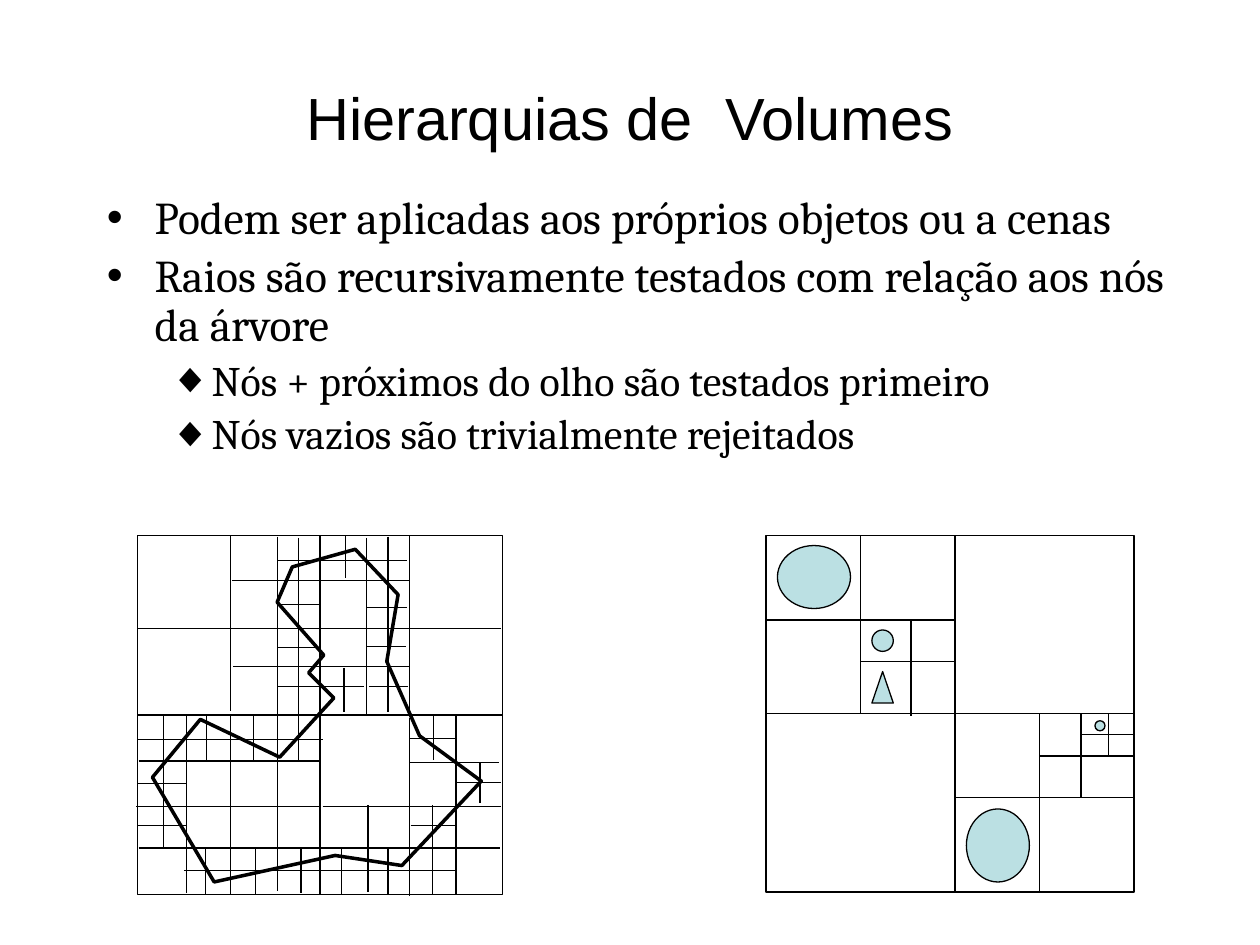
from dataclasses import dataclass

from lxml.etree import SubElement
from pptx import Presentation
from pptx.dml.color import RGBColor
from pptx.enum.shapes import MSO_CONNECTOR, MSO_SHAPE
from pptx.enum.text import MSO_ANCHOR, PP_ALIGN
from pptx.oxml.ns import qn
from pptx.util import Pt

PX = 9144


@dataclass(frozen=True)
class Theme:
    ink: RGBColor = RGBColor(0x00, 0x00, 0x00)
    object_fill: RGBColor = RGBColor(0xBB, 0xE0, 0xE3)
    title_font: str = "Arial"
    body_font: str = "Cambria"
    bullet_font: str = "Arial"
    title_size: int = 34
    point_size: int = 26
    detail_size: int = 24
    thin: float = 0.75
    thick: float = 2


THEME = Theme()

BULLETS = [
    ("Podem ser aplicadas aos próprios objetos ou a cenas", 0),
    ("Raios são recursivamente testados com relação aos nós da árvore", 0),
    ("Nós + próximos do olho são testados primeiro", 1),
    ("Nós vazios são trivialmente rejeitados", 1),
]
LEVELS = [
    {"size": THEME.point_size, "bullet": "•", "indent": 38, "hanging": 38},
    {"size": THEME.detail_size, "bullet": "◆", "indent": 81, "hanging": 31},
]

OUTLINE = [
    (121, 617), (159, 571), (222, 601), (265, 554), (245, 534), (257, 520),
    (220, 478), (232, 450), (282, 436), (316, 472), (307, 525), (333, 584),
    (382, 620), (319, 687), (266, 679), (170, 700),
]

OUTLINE_VERTICALS = [
    (183, 425, 564), (183, 568, 710), (325, 425, 566), (325, 570, 711),
    (291, 427, 567), (220, 426, 707), (308, 460, 498), (308, 426, 464),
    (274, 425, 459), (237, 427, 461), (237, 461, 603), (308, 488, 565),
    (273, 530, 565), (362, 568, 710), (148, 568, 709), (292, 639, 708),
    (130, 568, 673), (164, 568, 604), (163, 674, 710), (201, 568, 604),
    (203, 674, 710), (239, 673, 709), (271, 674, 710), (308, 674, 710),
    (344, 567, 603), (343, 639, 710), (381, 605, 637),
]
OUTLINE_HORIZONTALS = [
    (640, 256, 398), (640, 108, 254), (499, 256, 398), (499, 109, 257),
    (461, 255, 325), (461, 184, 254), (529, 185, 325), (482, 291, 323),
    (445, 291, 323), (445, 254, 291), (445, 221, 253), (480, 222, 254),
    (513, 291, 322), (545, 293, 324), (545, 220, 289), (605, 325, 396),
    (673, 110, 397), (514, 220, 253), (604, 110, 255), (691, 146, 361),
    (587, 109, 256), (622, 109, 148), (655, 326, 361), (586, 325, 361),
    (621, 362, 398), (655, 109, 148),
]
SCENE_VERTICALS = [
    (758, 425, 708), (683, 425, 567), (723, 493, 568), (825, 567, 708),
    (858, 567, 633), (880, 567, 600),
]
SCENE_HORIZONTALS = [
    (492, 608, 758), (525, 683, 758), (633, 758, 900), (600, 825, 900),
    (583, 858, 900),
]
SCENE_OBJECTS = [
    (MSO_SHAPE.OVAL, (617, 433, 58, 50)),
    (MSO_SHAPE.OVAL, (692, 500, 17, 17)),
    (MSO_SHAPE.ISOSCELES_TRIANGLE, (692, 533, 17, 25)),
    (MSO_SHAPE.OVAL, (767, 642, 50, 58)),
    (MSO_SHAPE.OVAL, (869, 572, 8, 8)),
]


def emu(*lengths):
    return [length * PX for length in lengths]


def add_frame(slide, box, anchor=MSO_ANCHOR.TOP):
    text_frame = slide.shapes.add_textbox(*emu(*box)).text_frame
    text_frame.word_wrap = True
    text_frame.vertical_anchor = anchor
    return text_frame


def write(paragraph, text, *, font, size, align=PP_ALIGN.LEFT, spacing=1.0,
          before=0, bullet=None, indent=0, hanging=0):
    paragraph.alignment = align
    paragraph.line_spacing = spacing
    paragraph.space_before = Pt(before)
    run = paragraph.add_run()
    run.text = text
    run.font.name = font
    run.font.size = Pt(size)
    run.font.color.rgb = THEME.ink
    if bullet:
        properties = paragraph._p.get_or_add_pPr()
        properties.set("marL", str(indent * PX))
        properties.set("indent", str(-hanging * PX))
        SubElement(properties, qn("a:buFont")).set("typeface", THEME.bullet_font)
        SubElement(properties, qn("a:buChar")).set("char", bullet)


def style(shape, fill=None, width=THEME.thin):
    shape.shadow.inherit = False
    if fill is None:
        shape.fill.background()
    else:
        shape.fill.solid()
        shape.fill.fore_color.rgb = fill
    shape.line.color.rgb = THEME.ink
    shape.line.width = Pt(width)


def add_figure(shapes, kind, box, fill=None):
    shape = shapes.add_shape(kind, *emu(*box))
    style(shape, fill)
    return shape


def add_line(shapes, *ends):
    connector = shapes.add_connector(MSO_CONNECTOR.STRAIGHT, *emu(*ends))
    connector.line.color.rgb = THEME.ink
    connector.line.width = Pt(THEME.thin)
    SubElement(connector._element.spPr, qn("a:effectLst"))
    return connector


def add_middle_split(shapes, square, ends, sites):
    connector = add_line(shapes, *ends)
    connector.begin_connect(square, sites[0])
    connector.end_connect(square, sites[1])


def add_splits(shapes, verticals, horizontals):
    for x, top, bottom in verticals:
        add_line(shapes, x, top, x, bottom)
    for y, left, right in horizontals:
        add_line(shapes, left, y, right, y)


def add_outline(shapes, points):
    builder = shapes.build_freeform(*points[0], scale=PX)
    builder.add_line_segments(points[1:], close=True)
    style(builder.convert_to_shape(), width=THEME.thick)


def add_outline_tree(slide):
    shapes = slide.shapes.add_group_shape().shapes
    add_outline(shapes, OUTLINE)
    square = add_figure(shapes, MSO_SHAPE.RECTANGLE, (109, 425, 290, 285))
    add_middle_split(shapes, square, (254, 425, 254, 710), (0, 2))
    add_middle_split(shapes, square, (109, 567, 399, 567), (1, 3))
    add_splits(shapes, OUTLINE_VERTICALS, OUTLINE_HORIZONTALS)


def add_scene_tree(slide):
    shapes = slide.shapes.add_group_shape().shapes
    square = add_figure(shapes, MSO_SHAPE.RECTANGLE, (608, 425, 292, 283))
    add_middle_split(shapes, square, (608, 567, 900, 567), (1, 3))
    add_splits(shapes, SCENE_VERTICALS, SCENE_HORIZONTALS)
    for kind, box in SCENE_OBJECTS:
        add_figure(shapes, kind, box, THEME.object_fill)


def add_bullets(slide):
    text_frame = add_frame(slide, (75, 150, 900, 230))
    for index, (text, level) in enumerate(BULLETS):
        paragraph = text_frame.add_paragraph() if index else text_frame.paragraphs[0]
        paragraph.level = level
        write(paragraph, text, font=THEME.body_font, spacing=0.9,
              before=LEVELS[level]["size"] * 0.2, **LEVELS[level])


def main():
    presentation = Presentation()
    presentation.slide_width, presentation.slide_height = emu(1000, 750)
    slide = presentation.slides.add_slide(presentation.slide_layouts[6])
    title = add_frame(slide, (50, 30, 900, 125), MSO_ANCHOR.MIDDLE)
    write(title.paragraphs[0], "Hierarquias de  Volumes", font=THEME.title_font,
          size=THEME.title_size, align=PP_ALIGN.CENTER)
    add_bullets(slide)
    add_outline_tree(slide)
    add_scene_tree(slide)
    presentation.save("out.pptx")


if __name__ == "__main__":
    main()
